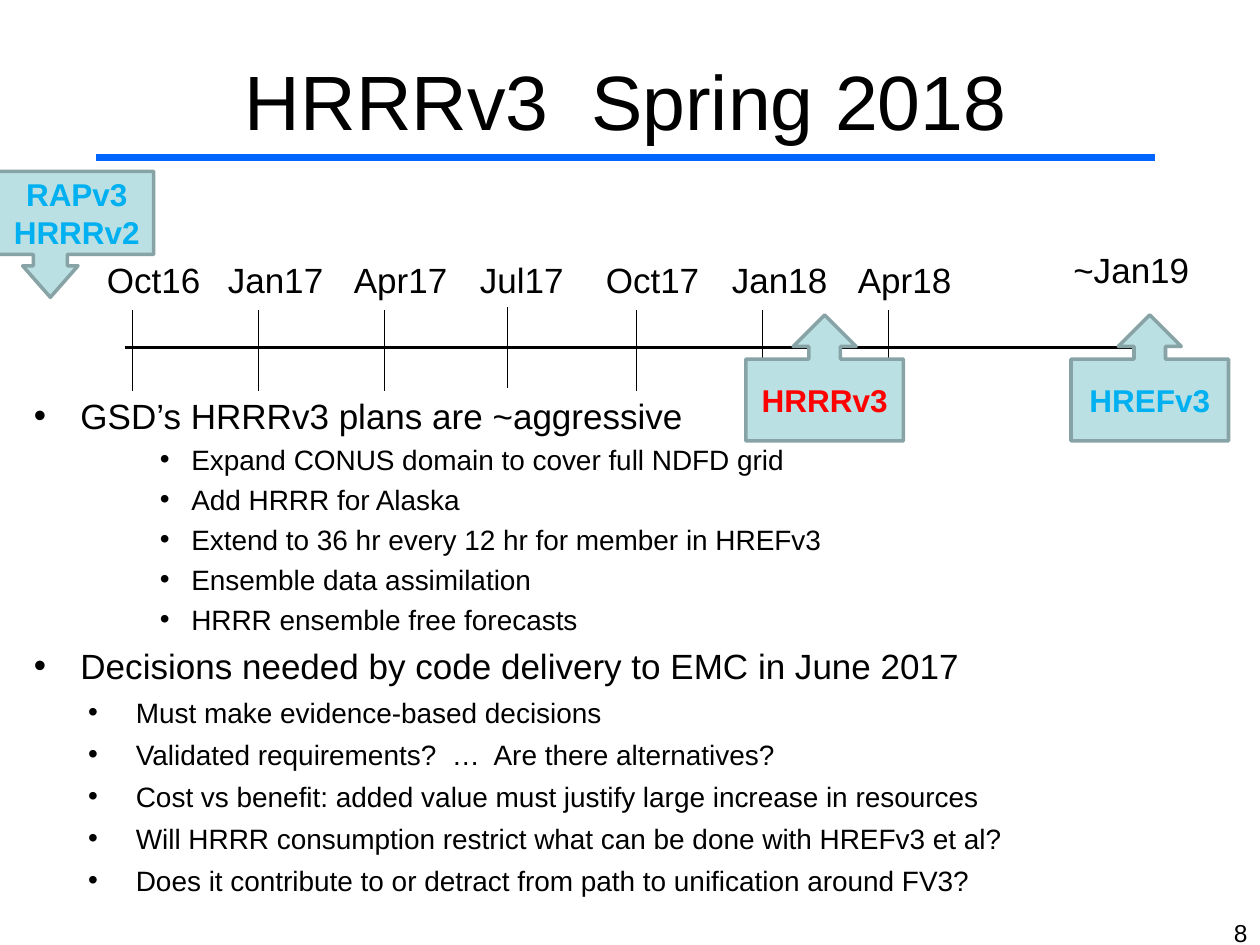
from lxml import etree
from pptx import Presentation
from pptx import util as u
from pptx.dml.color import RGBColor
from pptx.enum import shapes, text
from pptx.oxml import ns

BLACK = RGBColor(0, 0, 0)
RULE_BLUE = RGBColor(0x00, 0x66, 0xFF)
SKY = RGBColor(0x00, 0xB0, 0xF0)
RED = RGBColor(0xFF, 0, 0)
PALE_TEAL = RGBColor(0xBB, 0xE0, 0xE3)
TEAL_GREY = RGBColor(0x88, 0xA3, 0xA5)

LEFT, CENTER, RIGHT = (text.PP_ALIGN.LEFT, text.PP_ALIGN.CENTER,
                       text.PP_ALIGN.RIGHT)
UP = shapes.MSO_SHAPE.UP_ARROW_CALLOUT
DOWN = shapes.MSO_SHAPE.DOWN_ARROW_CALLOUT

MONTHS = ["Oct16", "Jan17", "Apr17", "Jul17", "Oct17", "Jan18", "Apr18"]
TICK_NUDGE = {"Jul17": (-0.02, -0.02)}
LABEL_NUDGE = {"Oct16": 0.04}

# level: (margin, hanging indent, size, space before)
STYLES = {
    "topic": (0, 0.37, 0.37, 20, 5.2),
    "plan": (2, 1.25, 0.25, 16, 3.6),
    "decision": (1, 0.81, 0.38, 16, 4.85),
}
BULLETS = [
    ("topic", "GSD’s HRRRv3 plans are ~aggressive"),
    ("plan", "Expand CONUS domain to cover full NDFD grid"),
    ("plan", "Add HRRR for Alaska"),
    ("plan", "Extend to 36 hr every 12 hr for member in HREFv3"),
    ("plan", "Ensemble data assimilation"),
    ("plan", "HRRR ensemble free forecasts"),
    ("topic", "Decisions needed by code delivery to EMC in June 2017"),
    ("decision", "Must make evidence-based decisions"),
    ("decision", "Validated requirements?  …  Are there alternatives?"),
    ("decision", "Cost vs benefit: added value must justify large increase in resources"),
    ("decision", "Will HRRR consumption restrict what can be done with HREFv3 et al?"),
    ("decision", "Does it contribute to or detract from path to unification around FV3?"),
]


def inches(*lengths):
    return [u.Inches(length) for length in lengths]


def add_span(para, words, size, color=BLACK, bold=False):
    span = para.add_run()
    span.text = words
    span.font.name = "Arial"
    span.font.size = u.Pt(size)
    span.font.bold = bold
    span.font.color.rgb = color


def add_label(page, box, words, size, align=LEFT):
    frame = page.shapes.add_textbox(*inches(*box)).text_frame
    frame.word_wrap = True
    para = frame.paragraphs[0]
    para.alignment = align
    add_span(para, words, size)


def add_line(page, start, end, color, width, arrow=False):
    line = page.shapes.add_connector(shapes.MSO_CONNECTOR.STRAIGHT,
                                     *inches(*start, *end))
    line.line.color.rgb = color
    line.line.width = u.Pt(width)
    if arrow:
        outline = line.line._get_or_add_ln()
        etree.SubElement(outline, ns.qn("a:tailEnd"), type="triangle")
    etree.SubElement(line._element.spPr, ns.qn("a:effectLst"))


def add_title(page, box):
    left, top, width, height = box
    title = page.shapes.title
    title.left, title.top, title.width, title.height = inches(*box)
    frame = title.text_frame
    frame.vertical_anchor = text.MSO_ANCHOR.MIDDLE
    para = frame.paragraphs[0]
    para.alignment = CENTER
    add_span(para, "HRRRv3  Spring 2018", 44)
    bottom = top + height
    add_line(page, (left + 0.29, bottom), (left + width - 0.3, bottom),
             RULE_BLUE, 4.5)


def add_bullets(page, box):
    frame = page.shapes.add_textbox(*inches(*box)).text_frame
    frame.word_wrap = True
    for index, (style, words) in enumerate(BULLETS):
        level, margin, hang, size, before = STYLES[style]
        para = frame.add_paragraph() if index else frame.paragraphs[0]
        para.level = level
        props = para._p.get_or_add_pPr()
        props.set("marL", str(u.Inches(margin)))
        props.set("indent", str(-u.Inches(hang)))
        etree.SubElement(props, ns.qn("a:buFont"), typeface="Arial")
        etree.SubElement(props, ns.qn("a:buChar"), char="•")
        if index:
            para.space_before = u.Pt(before)
        add_span(para, words, size)


def add_timeline(page, box):
    left, top, width, height = box
    axis = top + 0.76
    add_line(page, (left, axis), (left + width, axis), BLACK, 1.5, arrow=True)
    for index, month in enumerate(MONTHS):
        across, down = TICK_NUDGE.get(month, (0, 0))
        tick = left + 0.06 + index + across
        add_line(page, (tick, top + 0.46 + down), (tick, top + height + down),
                 BLACK, 0.75)
        label = left - 0.28 + index + LABEL_NUDGE.get(month, 0)
        add_label(page, (label, top, 0.97, 0.44), month, 20)
    add_label(page, (left + 7.43, top - 0.08, 1.25, 0.44), "~Jan19", 20)


def add_callout(page, box, kind, lines, color, adjustments,
                insets=(0.1, 0.1)):
    callout = page.shapes.add_shape(kind, *inches(*box))
    callout.shadow.inherit = False
    for index, value in enumerate(adjustments):
        callout.adjustments[index] = value
    callout.fill.solid()
    callout.fill.fore_color.rgb = PALE_TEAL
    callout.line.color.rgb = TEAL_GREY
    callout.line.width = u.Pt(2)
    frame = callout.text_frame
    frame.word_wrap = True
    frame.vertical_anchor = text.MSO_ANCHOR.MIDDLE
    frame.margin_left, frame.margin_right = inches(*insets)
    for index, words in enumerate(lines):
        para = frame.add_paragraph() if index else frame.paragraphs[0]
        para.alignment = CENTER
        add_span(para, words, 18, color, bold=True)


def main():
    deck = Presentation()
    deck.slide_width, deck.slide_height = inches(10, 7.5)
    page = deck.slides.add_slide(deck.slide_layouts[5])
    add_title(page, (0.47, 0.33, 9, 0.92))
    add_bullets(page, (0.17, 3.08, 9.42, 4))
    add_label(page, (7.67, 7.24, 2.33, 0.52), "8", 14, RIGHT)
    add_timeline(page, (0.99, 2, 8.26, 1.1))
    add_callout(page, (-0.42, 1.36, 1.64, 1), DOWN, ["RAPv3", "HRRRv2"], SKY,
                (0.27, 0.22, 0.25, 0.66), insets=(0.47, 0.05))
    for left, words, color in [(5.92, "HRRRv3", RED), (8.5, "HREFv3", SKY)]:
        add_callout(page, (left, 2.5, 1.25, 1), UP, [words], color,
                    (0.25, 0.25, 0.25, 0.65))
    deck.save("out.pptx")


if __name__ == "__main__":
    main()
